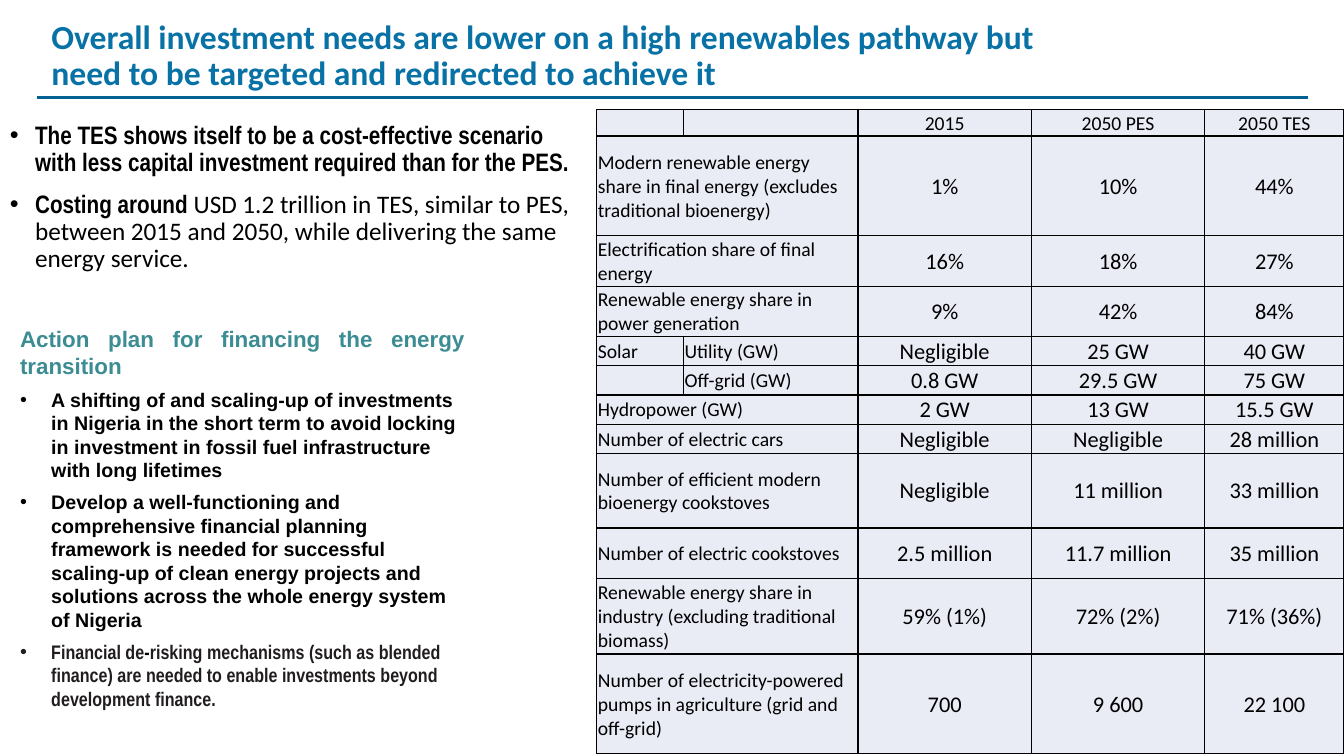
from lxml import etree
from pptx import Presentation
from pptx.dml.color import RGBColor
from pptx.enum.shapes import MSO_CONNECTOR
from pptx.enum.text import MSO_ANCHOR, MSO_AUTO_SIZE, PP_ALIGN
from pptx.oxml.ns import qn
from pptx.util import Inches, Pt

STRAIGHT = MSO_CONNECTOR.STRAIGHT
TOP, MIDDLE = MSO_ANCHOR.TOP, MSO_ANCHOR.MIDDLE
NO_FIT = MSO_AUTO_SIZE.NONE
LEFT, CENTER, JUSTIFY = PP_ALIGN.LEFT, PP_ALIGN.CENTER, PP_ALIGN.JUSTIFY

TITLE_BLUE = RGBColor(0x08, 0x72, 0xA6)
RULE_BLUE = RGBColor(0x00, 0x61, 0x92)
TEAL = RGBColor(0x3C, 0x8C, 0x93)
BLACK = RGBColor(0x00, 0x00, 0x00)
CHARCOAL = RGBColor(0x21, 0x1D, 0x1E)
CELL_FILL = RGBColor(0xE9, 0xEB, 0xF5)

CALIBRI, ARIAL, NARROW = "Calibri", "Arial", "Arial Narrow"

TITLE = ("Overall investment needs are lower on a high renewables pathway but "
         "need to be targeted and redirected to achieve it")

# Each finding is a list of (text, font, bold)
FINDINGS = [
    [("The TES shows itself to be a cost-effective scenario with less capital "
      "investment required than for the PES.", NARROW, True)],
    [("Costing around ", NARROW, True),
     ("USD 1.2 trillion in TES, similar to PES, between 2015 and 2050, while "
      "delivering the same energy service.", CALIBRI, False)],
]

PLAN_HEADING = "Action plan for financing the energy transition"
# Each action is a list of (text, font, colour)
ACTIONS = [
    [("A shifting of and scaling-up of investments in Nigeria in the short term "
      "to avoid locking in investment in fossil fuel infrastructure with long "
      "lifetimes", ARIAL, BLACK)],
    [("Develop a well-functioning and comprehensive financial planning framework "
      "is needed for successful scaling-up of clean energy projects and solutions "
      "across the whole energy system of Nigeria", ARIAL, BLACK)],
    [("Financial de", NARROW, CHARCOAL),
     ("‑", NARROW, BLACK),
     ("risking mechanisms (such as blended finance) are needed to enable "
      "investments beyond development finance.", NARROW, CHARCOAL)],
]

COLUMN_WIDTHS = [0.86, 1.73, 1.72, 1.72, 1.38]
HEADER_HEIGHT = 0.26
HEADER = ["", "", "2015", "2050 PES", "2050 TES"]
# Row height, label, sub-label (None: label spans both columns), values
INDICATORS = [
    (0.99, "Modern renewable energy share in final energy (excludes traditional "
     "bioenergy)", None, ["1%", "10%", "44%"]),
    (0.5, "Electrification share of final energy", None, ["16%", "18%", "27%"]),
    (0.5, "Renewable energy share in power generation", None, ["9%", "42%", "84%"]),
    (0.29, "Solar", "Utility (GW)", ["Negligible", "25 GW", "40 GW"]),
    (0.29, "", "Off-grid (GW)", ["0.8 GW", "29.5 GW", "75 GW"]),
    (0.29, "Hydropower (GW)", None, ["2 GW", "13 GW", "15.5 GW"]),
    (0.29, "Number of electric cars", None,
     ["Negligible", "Negligible", "28 million"]),
    (0.74, "Number of efficient modern bioenergy cookstoves", None,
     ["Negligible", "11 million", "33 million"]),
    (0.5, "Number of electric cookstoves", None,
     ["2.5 million", "11.7 million", "35 million"]),
    (0.75, "Renewable energy share in industry (excluding traditional biomass)",
     None, ["59% (1%)", "72% (2%)", "71% (36%)"]),
    (0.99, "Number of electricity-powered pumps in agriculture (grid and off-grid)",
     None, ["700", "9 600", "22 100"]),
]


def add_run(p, text, size, font, color, bold=False):
    r = p.add_run()
    r.text = text
    r.font.size, r.font.name, r.font.bold = Pt(size), font, bold
    r.font.color.rgb = color


def set_indent(p, left, hanging=0):
    """Indent a paragraph; a hanging indent also gets a bullet."""
    pPr = p._p.get_or_add_pPr()
    pPr.set("marL", str(Inches(left)))
    pPr.set("indent", str(-Inches(hanging)))
    if hanging:
        etree.SubElement(pPr, qn("a:buFont")).set("typeface", ARIAL)
        etree.SubElement(pPr, qn("a:buChar")).set("char", "•")


def add_text_frame(s, x, y, w, h):
    tf = s.shapes.add_textbox(Inches(x), Inches(y), Inches(w), Inches(h)).text_frame
    tf.word_wrap = True
    return tf


def add_title(s, x, y, w, h):
    sp = s.shapes.title
    sp.left, sp.top, sp.width, sp.height = Inches(x), Inches(y), Inches(w), Inches(h)
    tf = sp.text_frame
    tf.word_wrap, tf.auto_size, tf.vertical_anchor = True, NO_FIT, TOP
    p = tf.paragraphs[0]
    p.alignment, p.line_spacing = LEFT, 0.9
    add_run(p, TITLE, 24, CALIBRI, TITLE_BLUE, True)

    # Rule under the title
    rule_y = Inches(y + h + 0.08)
    rule = s.shapes.add_connector(STRAIGHT, Inches(x - 0.04), rule_y,
                                  Inches(12.97), rule_y)
    rule.line.color.rgb, rule.line.width = RULE_BLUE, Pt(2.25)
    etree.SubElement(rule._element.spPr, qn("a:effectLst"))


def add_findings(s, x, y, w, h):
    tf = add_text_frame(s, x, y, w, h)
    for i, finding in enumerate(FINDINGS):
        p = tf.add_paragraph() if i else tf.paragraphs[0]
        set_indent(p, 0.25, 0.25)
        p.line_spacing = 0.9
        if i:
            p.space_before = Pt(10)
        for text, font, bold in finding:
            add_run(p, text, 18, font, BLACK, bold)


def add_action_plan(s, x, y, w, h):
    tf = add_text_frame(s, x, y, w, h)
    p = tf.paragraphs[0]
    set_indent(p, 0.1)
    p.alignment, p.space_after = JUSTIFY, Pt(6)
    add_run(p, PLAN_HEADING, 16, ARIAL, TEAL, True)
    for action in ACTIONS:
        p = tf.add_paragraph()
        set_indent(p, 0.41, 0.31)
        p.space_after = Pt(6)
        for text, font, color in action:
            add_run(p, text, 14, font, color, True)


def format_cell(cell, text, size, align):
    cell.margin_left = cell.margin_right = cell.margin_top = Inches(0.01)
    cell.margin_bottom = 0
    cell.vertical_anchor = MIDDLE
    p = cell.text_frame.paragraphs[0]
    p.alignment = align
    if text:
        add_run(p, text, size, CALIBRI, BLACK)
    else:
        etree.SubElement(p._p, qn("a:endParaRPr")).set("sz", str(size * 100))

    # Borders come before the fill in the cell properties
    tcPr = cell._tc.get_or_add_tcPr()
    for side in ("a:lnL", "a:lnR", "a:lnT", "a:lnB"):
        ln = etree.SubElement(tcPr, qn(side), w=str(Pt(1)))
        fill = etree.SubElement(ln, qn("a:solidFill"))
        etree.SubElement(fill, qn("a:srgbClr")).set("val", str(BLACK))
    cell.fill.solid()
    cell.fill.fore_color.rgb = CELL_FILL


def add_indicator_table(s, x, y, w, h):
    table = s.shapes.add_table(len(INDICATORS) + 1, len(COLUMN_WIDTHS), Inches(x),
                               Inches(y), Inches(w), Inches(h)).table
    table.first_row = table.horz_banding = False
    for column, width in zip(table.columns, COLUMN_WIDTHS):
        column.width = Inches(width)

    # Header row
    table.rows[0].height = Inches(HEADER_HEIGHT)
    for c, text in enumerate(HEADER):
        format_cell(table.cell(0, c), text, 14, CENTER)

    # Indicator rows
    for i, (height, label, sub_label, values) in enumerate(INDICATORS, 1):
        table.rows[i].height = Inches(height)
        if sub_label is None:
            table.cell(i, 0).merge(table.cell(i, 1))
        for c, text in enumerate([label, sub_label or ""]):
            format_cell(table.cell(i, c), text, 14, LEFT)
        for c, text in enumerate(values, 2):
            format_cell(table.cell(i, c), text, 16, CENTER)


def main():
    prs = Presentation()
    prs.slide_width, prs.slide_height = Inches(13.33), Inches(7.5)
    s = prs.slides.add_slide(prs.slide_layouts[5])
    add_title(s, 0.41, 0.15, 10.34, 0.74)
    add_findings(s, 0, 1.17, 5.79, 1.9)
    add_action_plan(s, 0, 3.18, 4.71, 4.27)
    add_indicator_table(s, 5.92, 1.09, 7.41, 6.41)
    prs.save("out.pptx")


if __name__ == "__main__":
    main()
